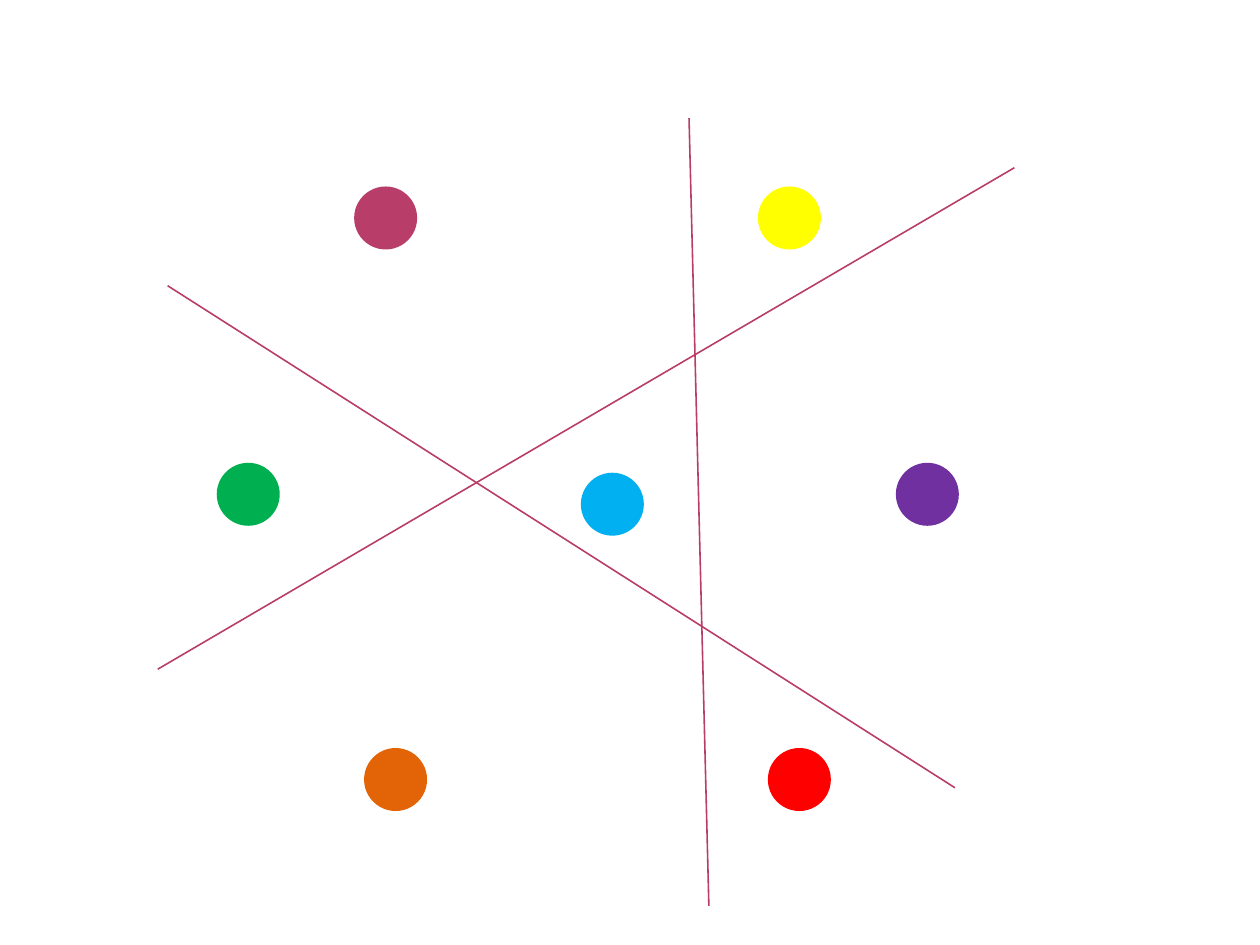
from dataclasses import dataclass

from lxml.etree import SubElement
from pptx import Presentation
from pptx.dml.color import RGBColor
from pptx.enum.shapes import MSO_CONNECTOR, MSO_SHAPE
from pptx.oxml.ns import qn
from pptx.util import Cm, Pt


@dataclass(frozen=True)
class Theme:
    background: str = "FFFFFF"
    plum: str = "B83D68"
    blue: str = "00B0F0"
    green: str = "00B050"
    orange: str = "E36406"
    red: str = "FF0000"
    purple: str = "7030A0"
    yellow: str = "FFFF00"
    line_width: float = 0.9


theme = Theme()
DOT_SIZE = 1.27
TOP_ROW, MIDDLE_ROW, BOTTOM_ROW = 3.76, 9.33, 15.08

presentation = Presentation()
presentation.slide_width = Cm(25.4)
presentation.slide_height = Cm(19.05)
slide = presentation.slides.add_slide(presentation.slide_layouts[6])
slide.background.fill.solid()
slide.background.fill.fore_color.rgb = RGBColor.from_string(theme.background)

# Dots, one in each region: left, top, colour
dots = [
    (7.14, TOP_ROW, theme.plum),
    (11.71, 9.53, theme.blue),
    (4.37, MIDDLE_ROW, theme.green),
    (7.34, BOTTOM_ROW, theme.orange),
    (15.48, BOTTOM_ROW, theme.red),
    (18.06, MIDDLE_ROW, theme.purple),
    (15.28, TOP_ROW, theme.yellow),
]
for left, top, colour in dots:
    dot = slide.shapes.add_shape(
        MSO_SHAPE.FLOWCHART_CONNECTOR, Cm(left), Cm(top), Cm(DOT_SIZE), Cm(DOT_SIZE)
    )
    dot.shadow.inherit = False
    dot.fill.solid()
    dot.fill.fore_color.rgb = RGBColor.from_string(colour)
    dot.line.fill.background()

# Lines dividing the plane into seven regions: start x, y, end x, y
dividers = [
    (3.18, 13.49, 20.45, 3.38),
    (13.89, 2.38, 14.29, 18.26),
    (3.38, 5.76, 19.25, 15.88),
]
for ends in dividers:
    divider = slide.shapes.add_connector(
        MSO_CONNECTOR.STRAIGHT, *(Cm(value) for value in ends)
    )
    divider.line.color.rgb = RGBColor.from_string(theme.plum)
    divider.line.width = Pt(theme.line_width)
    SubElement(divider._element.spPr, qn("a:effectLst"))

presentation.save("out.pptx")
